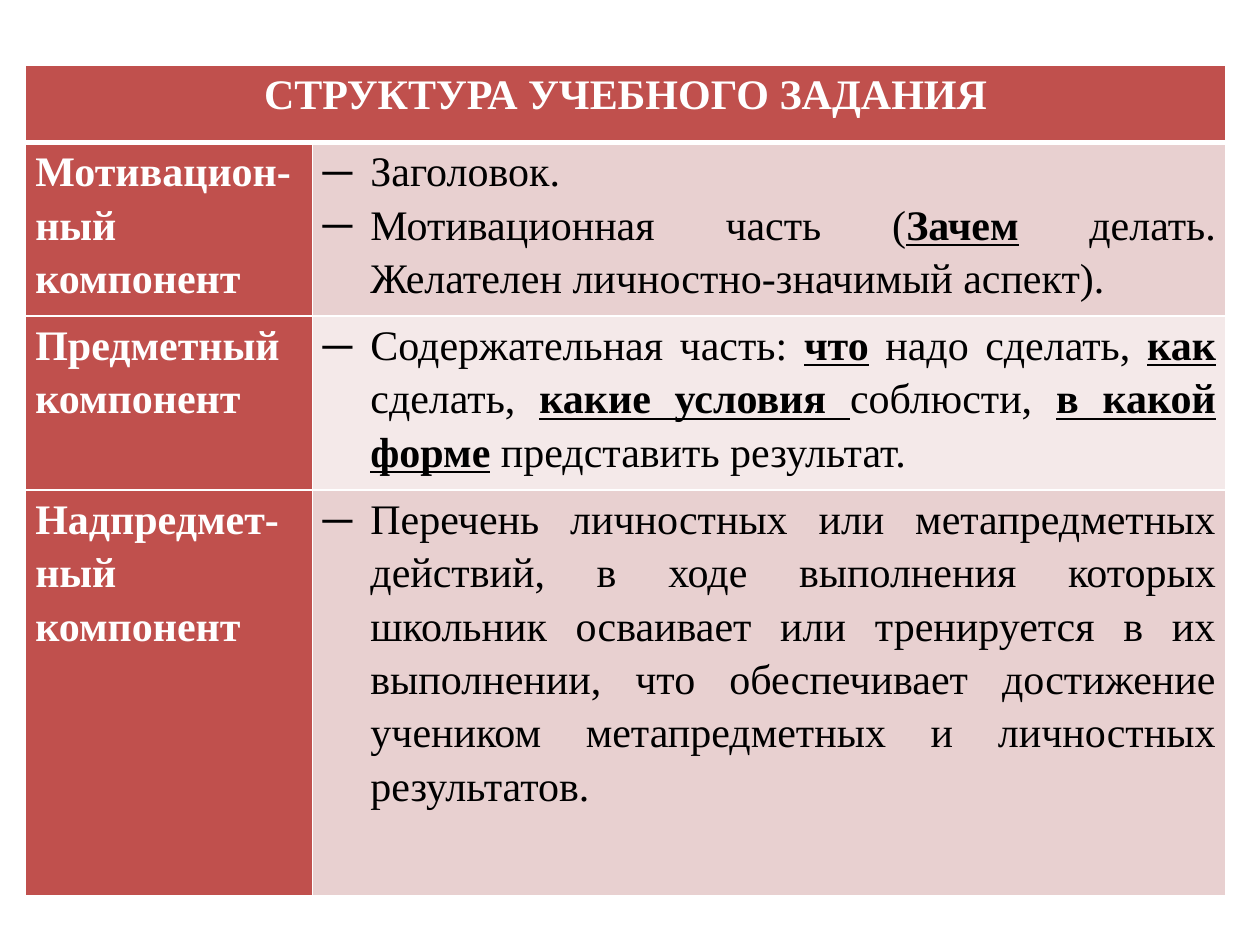
from lxml.etree import SubElement
from pptx import Presentation
from pptx.dml.color import RGBColor
from pptx.enum.text import PP_ALIGN
from pptx.oxml import parse_xml
from pptx.oxml.ns import nsdecls, qn
from pptx.util import Inches, Pt

THEME = {
    "font": "Times New Roman", "size": 24,
    "accent": "C0504D", "bands": ("E8D0D0", "F4E9E9"),
    "light": "FFFFFF", "dark": "000000",
}
TITLE = "СТРУКТУРА УЧЕБНОГО ЗАДАНИЯ"
# Each component: label, then its items; an item alternates plain and emphasised text.
COMPONENTS = [
    ("Мотивацион-ный компонент", [
        ["Заголовок."],
        ["Мотивационная часть (", "Зачем",
         " делать. Желателен личностно-значимый аспект)."],
    ]),
    ("Предметный компонент", [
        ["Содержательная часть: ", "что", " надо сделать, ", "как", " сделать, ",
         "какие условия ", "соблюсти, ", "в какой форме", " представить результат."],
    ]),
    ("Надпредмет-ный компонент", [
        ["Перечень личностных или метапредметных действий, в ходе выполнения "
         "которых школьник осваивает или тренируется в их выполнении, что "
         "обеспечивает достижение учеником метапредметных и личностных результатов."],
    ]),
]
LEFT, TOP = 0.2, 0.52
COL_WIDTHS = (2.28, 7.25)
ROW_HEIGHTS = (0.61, 1.38, 1.38, 3.22)
INDENT = 0.38


def rgb(name):
    return RGBColor.from_string(name)


def set_borders(cell, bottom=1):
    tcPr = cell._tc.get_or_add_tcPr()
    widths = {"lnL": 1, "lnR": 1, "lnT": 1, "lnB": bottom}
    for i, (tag, width) in enumerate(widths.items()):
        tcPr.insert(i, parse_xml(
            f'<a:{tag} {nsdecls("a")} w="{Pt(width)}"><a:solidFill>'
            f'<a:srgbClr val="{THEME["light"]}"/></a:solidFill></a:{tag}>'))


def add_dash(p):
    pPr = p._p.get_or_add_pPr()
    pPr.set("marL", str(Inches(INDENT)))
    pPr.set("indent", str(-Inches(INDENT)))
    SubElement(pPr, qn("a:buFont"), typeface=THEME["font"])
    SubElement(pPr, qn("a:buChar"), char="─")


def fill_cell(cell, items, fill, color, bold=False, align=PP_ALIGN.JUSTIFY,
              dashes=False, bottom=1):
    cell.fill.solid()
    cell.fill.fore_color.rgb = rgb(fill)
    set_borders(cell, bottom)
    cell.margin_left = cell.margin_right = Inches(0.08)
    cell.margin_top = cell.margin_bottom = 0
    tf = cell.text_frame
    for i, pieces in enumerate(items):
        p = tf.add_paragraph() if i else tf.paragraphs[0]
        p.alignment, p.line_spacing = align, 1.15
        if dashes:
            add_dash(p)
        for j, text in enumerate(pieces):
            r = p.add_run()
            r.text = text
            font, strong = r.font, j % 2 == 1
            font.name, font.size = THEME["font"], Pt(THEME["size"])
            font.color.rgb = rgb(color)
            font.bold, font.underline = bold or strong, strong


def main():
    prs = Presentation()
    prs.slide_width, prs.slide_height = Inches(10), Inches(7.5)
    s = prs.slides.add_slide(prs.slide_layouts[6])
    table = s.shapes.add_table(
        len(ROW_HEIGHTS), len(COL_WIDTHS), Inches(LEFT), Inches(TOP),
        Inches(sum(COL_WIDTHS)), Inches(sum(ROW_HEIGHTS))).table
    for col, width in zip(table.columns, COL_WIDTHS):
        col.width = Inches(width)
    for row, height in zip(table.rows, ROW_HEIGHTS):
        row.height = Inches(height)

    header = table.cell(0, 0)
    header.merge(table.cell(0, 1))
    set_borders(table.cell(0, 1), bottom=3)
    fill_cell(header, [[TITLE]], THEME["accent"], THEME["light"], bold=True,
              align=PP_ALIGN.CENTER, bottom=3)
    for i, (label, items) in enumerate(COMPONENTS):
        fill_cell(table.cell(i + 1, 0), [[label]], THEME["accent"], THEME["light"],
                  bold=True)
        fill_cell(table.cell(i + 1, 1), items, THEME["bands"][i % 2], THEME["dark"],
                  dashes=True)
    prs.save("out.pptx")


if __name__ == "__main__":
    main()
